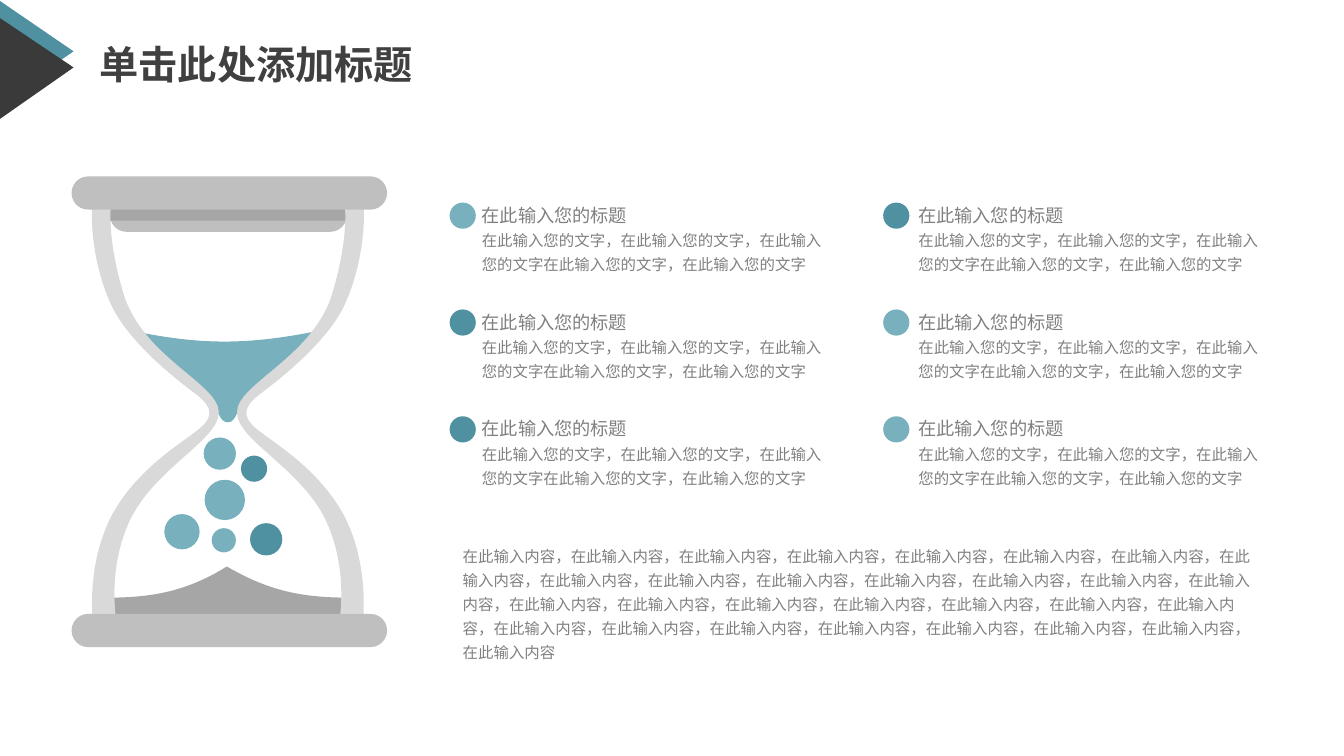
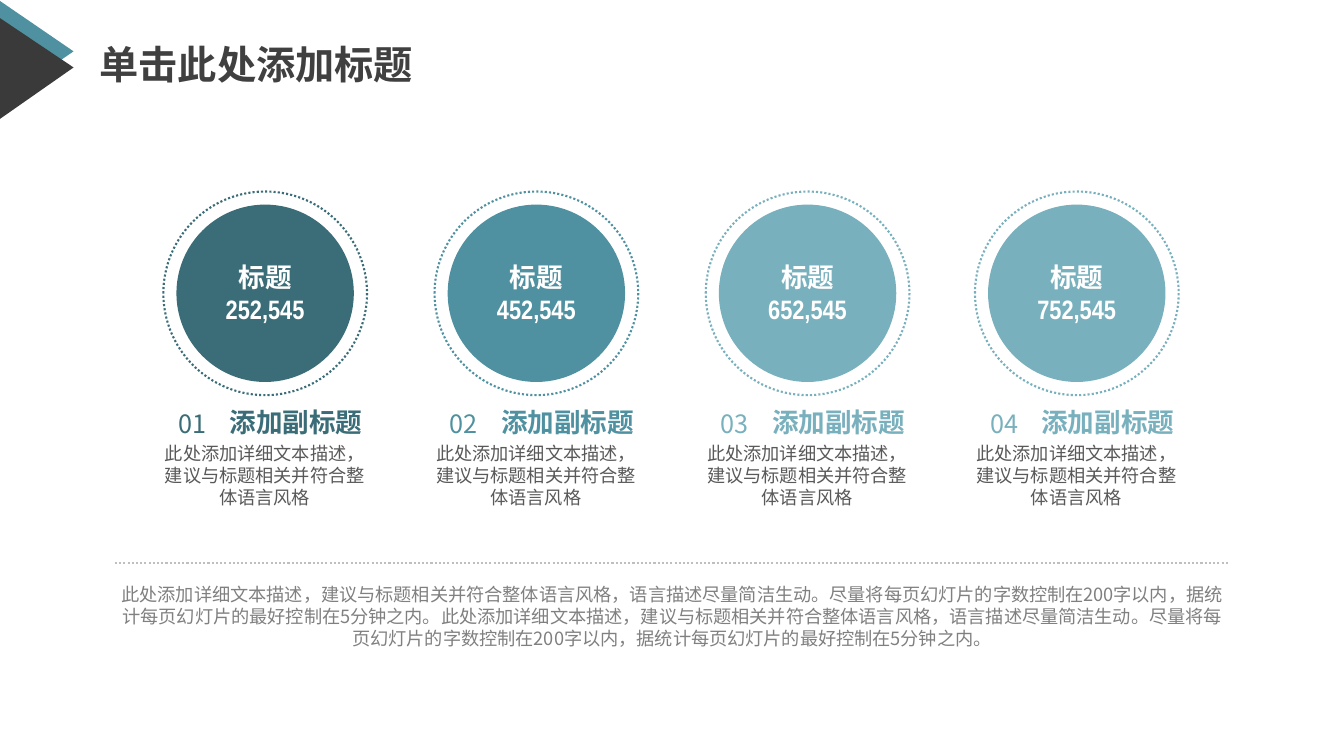
from lxml import etree
from pptx import Presentation
from pptx import util as u
from pptx.dml.color import RGBColor
from pptx.enum import dml, lang, shapes, text
from pptx.oxml.ns import qn

DEEP, TEAL, LIGHT = "3B6D78", "4F91A0", "79B0BD"
CHARCOAL, TITLE_GREY, TEXT_GREY, BODY_GREY = "3A3A3A", "404040", "595959", "808080"
CAP_GREY, SAND_GREY, GLASS_GREY, WHITE = "BFBFBF", "A6A6A6", "D9D9D9", "FFFFFF"
CJK_FONT = "Noto Sans CJK SC"
OVAL, ROUNDED = shapes.MSO_SHAPE.OVAL, shapes.MSO_SHAPE.ROUNDED_RECTANGLE
CENTER, MIDDLE = text.PP_ALIGN.CENTER, text.MSO_ANCHOR.MIDDLE


def paint(shape, fill=None, dots=None):
    shape.shadow.inherit = False
    if fill:
        shape.fill.solid()
        shape.fill.fore_color.rgb = RGBColor.from_string(fill)
    else:
        shape.fill.background()
    if dots:
        shape.line.color.rgb = RGBColor.from_string(dots)
        shape.line.width = u.Pt(1.5)
        shape.line.dash_style = dml.MSO_LINE.ROUND_DOT
    else:
        shape.line.fill.background()


def write(shape, lines, colour, font=CJK_FONT, bold=False, align=text.PP_ALIGN.LEFT,
          spacing=1.0, insets=(0.1, 0.05), anchor=text.MSO_ANCHOR.TOP):
    frame = shape.text_frame
    frame.word_wrap = True
    frame.vertical_anchor = anchor
    frame.margin_left = frame.margin_right = u.Inches(insets[0])
    frame.margin_top = frame.margin_bottom = u.Inches(insets[1])
    frame.text = "\n".join(words for words, size in lines)
    for paragraph, (words, size) in zip(frame.paragraphs, lines):
        paragraph.alignment = align
        paragraph.line_spacing = spacing
        paragraph._p.get_or_add_pPr().set("hangingPunct", "0")
        for run in paragraph.runs:
            run.font.size = u.Pt(size)
            run.font.bold = bold
            run.font.name = font
            run.font.color.rgb = RGBColor.from_string(colour)
            run.font.language_id = lang.MSO_LANGUAGE_ID.SIMPLIFIED_CHINESE
            east_asian = etree.SubElement(run._r.get_or_add_rPr(), qn("a:ea"))
            east_asian.set("typeface", CJK_FONT)


presentation = Presentation()
presentation.slide_width = u.Inches(13.33)
presentation.slide_height = u.Inches(7.5)

for number in range(2):
    slide = presentation.slides.add_slide(presentation.slide_layouts[6])
    for colour, top, tip, bottom in [(TEAL, 0.01, 0.51, 1.01), (CHARCOAL, 0.18, 0.67, 1.18)]:
        builder = slide.shapes.build_freeform(0, u.Inches(top))
        builder.add_line_segments([(u.Inches(0.73), u.Inches(tip)), (0, u.Inches(bottom))])
        paint(builder.convert_to_shape(), colour)
    title = slide.shapes.add_textbox(u.Inches(0.89), u.Inches(0.34), u.Inches(5.28), u.Inches(0.65))
    write(title, [("单击此处添加标题", 28)], TITLE_GREY, "Arial", True, spacing=0.9, anchor=MIDDLE)

hourglass_slide, circles_slide = presentation.slides

LOWER_SAND = [(1.04, 5.93), (1.45, 5.93, 1.82, 5.89, 2.25, 5.62),
              (2.71, 5.89, 3.06, 5.93, 3.5, 5.93), (3.53, 6.07, 3.5, 6.23, 3.5, 6.38),
              (1.04, 6.38), (1.04, 6.23, 1.02, 6.08, 1.04, 5.93)]
UPPER_SAND = [(1.4, 3.3), (1.5, 3.43, 1.72, 3.62, 1.83, 3.73),
              (1.95, 3.84, 2.02, 3.89, 2.09, 3.97), (2.16, 4.04, 2.17, 4.19, 2.26, 4.19),
              (2.35, 4.19, 2.36, 4.03, 2.42, 3.94), (2.48, 3.85, 2.65, 3.76, 2.77, 3.64),
              (2.9, 3.52, 3.06, 3.42, 3.12, 3.29), (2.46, 3.42, 2.01, 3.42, 1.4, 3.3)]
LEFT_GLASS = [(0.92, 1.94), (0.88, 2.28, 0.96, 2.74, 1.12, 3.06),
              (1.29, 3.39, 1.7, 3.73, 1.93, 3.9), (2.16, 4.07, 2.09, 4.17, 1.93, 4.29),
              (1.76, 4.42, 1.35, 4.67, 1.11, 5.11), (0.88, 5.55, 0.9, 6.05, 0.93, 6.26),
              (1.04, 6.25, 1.05, 6.25, 1.17, 6.25), (1.17, 6.26, 1.04, 5.71, 1.28, 5.18),
              (1.52, 4.65, 2.17, 4.37, 2.17, 4.09), (2.17, 3.81, 1.43, 3.55, 1.23, 2.93),
              (1.04, 2.31, 1.1, 1.95, 1.12, 1.94), (1.08, 1.94, 0.99, 1.94, 0.92, 1.94)]
RIGHT_GLASS = [tuple(4.52 - value if index % 2 == 0 else value
                     for index, value in enumerate(step)) for step in LEFT_GLASS]
RIMS = [(1.09, 1.97, 2.35, 0.5, CAP_GREY), (1.04, 1.86, 2.46, 0, SAND_GREY)]
CAPS = [(0.71, 1.75, 3.13, 0.5, CAP_GREY), (0.71, 6.09, 3.13, 0.5, CAP_GREY)]

for outlines, bars in [([(LOWER_SAND, SAND_GREY), (UPPER_SAND, LIGHT)], RIMS),
                       ([(LEFT_GLASS, GLASS_GREY), (RIGHT_GLASS, GLASS_GREY)], CAPS)]:
    for steps, colour in outlines:
        anchors = [(u.Inches(step[-2]), u.Inches(step[-1])) for step in steps]
        builder = hourglass_slide.shapes.build_freeform(*anchors[0])
        builder.add_line_segments(anchors[1:])
        outline = builder.convert_to_shape()
        segments = list(outline._element.iter(qn("a:lnTo")))
        for segment, step in zip(segments, steps[1:]):
            if len(step) == 2:
                continue
            segment.tag = qn("a:cubicBezTo")
            for position in (0, 2):
                control = etree.Element(qn("a:pt"))
                control.set("x", str(u.Inches(step[position]) - outline.left))
                control.set("y", str(u.Inches(step[position + 1]) - outline.top))
                segment.insert(position // 2, control)
        paint(outline, colour)
    for left, top, width, rounding, colour in bars:
        bar = hourglass_slide.shapes.add_shape(
            ROUNDED, u.Inches(left), u.Inches(top), u.Inches(width), u.Inches(0.33))
        bar.adjustments[0] = rounding
        paint(bar, colour)

balls = [(2.02, 4.34, 0.32, LIGHT), (2.03, 4.76, 0.4, LIGHT), (1.63, 5.1, 0.35, LIGHT),
         (2.1, 5.24, 0.24, LIGHT), (2.39, 4.52, 0.26, TEAL), (2.48, 5.19, 0.32, TEAL)]
item_lines = [("在此输入您的标题", 13),
              ("在此输入您的文字，在此输入您的文字，在此输入您的文字在此输入您的文字，在此输入您的文字", 11)]
for dot_left, text_left, colours in [(4.46, 4.68, (LIGHT, TEAL, TEAL)),
                                     (8.76, 9.01, (TEAL, LIGHT, LIGHT))]:
    for row, colour in enumerate(colours):
        balls.append((dot_left, 2.01 + 1.06 * row, 0.26, colour))
        item = hourglass_slide.shapes.add_textbox(
            u.Inches(text_left), u.Inches(1.91 + 1.06 * row), u.Inches(3.59), u.Inches(0.84))
        write(item, item_lines, BODY_GREY, spacing=1.3)
for left, top, size, colour in balls:
    ball = hourglass_slide.shapes.add_shape(
        OVAL, u.Inches(left), u.Inches(top), u.Inches(size), u.Inches(size))
    paint(ball, colour)

summary = hourglass_slide.shapes.add_textbox(
    u.Inches(4.46), u.Inches(5.3), u.Inches(8.14), u.Inches(1.34))
write(summary, [("，".join(["在此输入内容"] * 30), 11)], BODY_GREY, spacing=1.3, insets=(0.13, 0.07))

for index, (left, figure, colour) in enumerate([
        (1.62, "252,545", DEEP), (4.31, "452,545", TEAL),
        (7, "652,545", LIGHT), (9.67, "752,545", LIGHT)]):
    ring = circles_slide.shapes.add_shape(
        OVAL, u.Inches(left), u.Inches(1.9), u.Inches(2.02), u.Inches(2.02))
    paint(ring, dots=colour)
    disc = circles_slide.shapes.add_shape(
        OVAL, u.Inches(left + 0.13), u.Inches(2.03), u.Inches(1.76), u.Inches(1.76))
    paint(disc, colour)
    write(disc, [("标题", 19), (figure, 19)], WHITE, "Arial Narrow", True, CENTER, anchor=MIDDLE)
    description = circles_slide.shapes.add_textbox(
        u.Inches(left - 0.17), u.Inches(4.34), u.Inches(2.35), u.Inches(0.76))
    write(description, [("此处添加详细文本描述，建议与标题相关并符合整体语言风格", 13)], TEXT_GREY, align=CENTER)
    for words, size, bold, offset, top, width in [(f"{index + 1:02}", 18, False, 0.15, 4, 0.4),
                                                  ("添加副标题", 19, True, 0.66, 3.98, 1.5)]:
        label = circles_slide.shapes.add_textbox(
            u.Inches(left + offset), u.Inches(top), u.Inches(width), u.Inches(0.4))
        write(label, [(words, size)], colour, bold=bold, insets=(0, 0.05))

divider = circles_slide.shapes.add_connector(
    shapes.MSO_CONNECTOR.STRAIGHT, u.Inches(1.14), u.Inches(5.59), u.Inches(12.19), u.Inches(5.59))
divider.line.color.rgb = RGBColor.from_string(CAP_GREY)
divider.line.width = u.Pt(1.5)
divider.line.dash_style = dml.MSO_LINE.ROUND_DOT
etree.SubElement(divider._element.spPr, qn("a:effectLst"))

advice = ("此处添加详细文本描述，建议与标题相关并符合整体语言风格，语言描述尽量简洁生动。"
          "尽量将每页幻灯片的字数控制在200字以内，据统计每页幻灯片的最好控制在5分钟之内。")
footnote = circles_slide.shapes.add_textbox(
    u.Inches(1.13), u.Inches(5.79), u.Inches(11.07), u.Inches(0.67))
write(footnote, [(advice * 2, 13)], BODY_GREY, align=CENTER, insets=(0, 0))

presentation.save("out.pptx")
